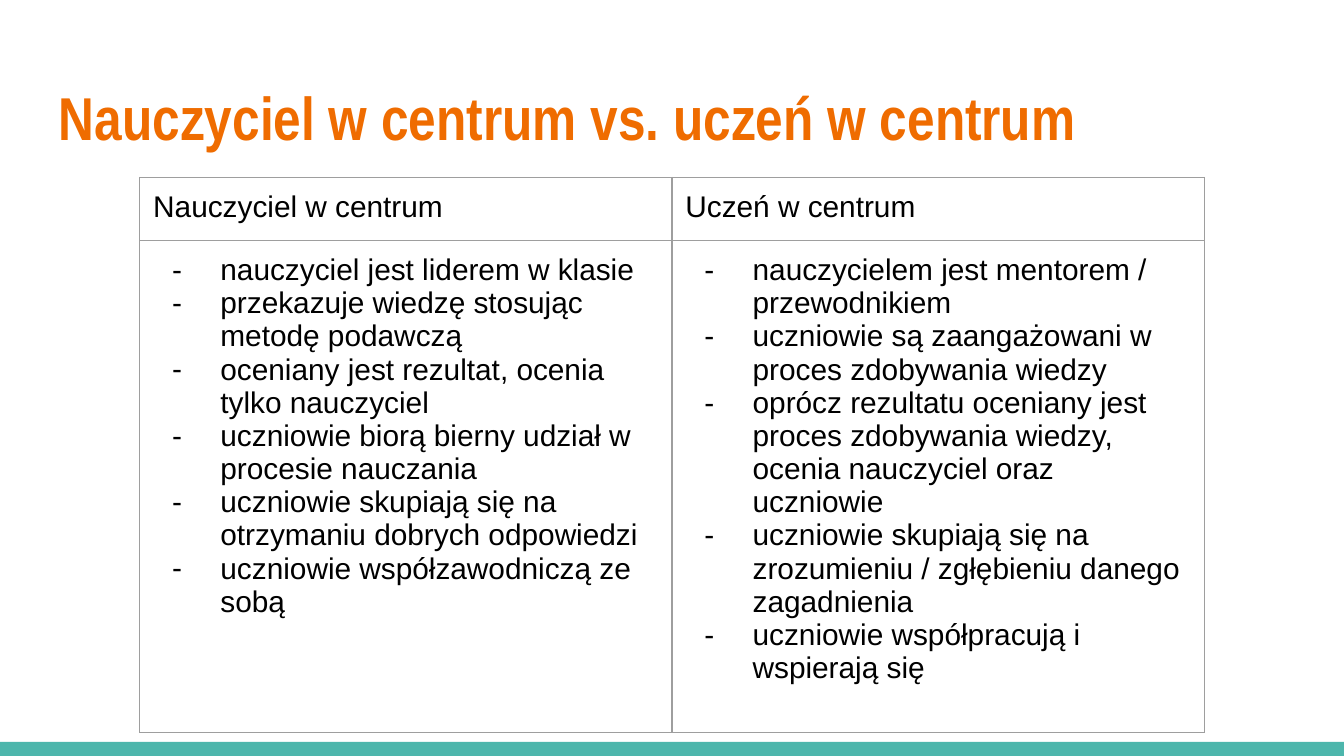
from dataclasses import dataclass

from lxml.etree import SubElement
from pptx import Presentation
from pptx.dml.color import RGBColor as Rgb
from pptx.enum.shapes import MSO_SHAPE as Preset
from pptx.enum.text import MSO_ANCHOR as Anchor
from pptx.oxml import parse_xml
from pptx.oxml.ns import nsdecls, qn
from pptx.util import Inches, Pt


@dataclass(frozen=True)
class Theme:
    title_color: str = "EF6C00"
    text_color: str = "000000"
    accent: str = "4DB6AC"
    border: str = "9E9E9E"
    border_width: float = 0.75
    title_font: str = "Arial Narrow"
    body_font: str = "Arial"
    title_size: float = 32.4
    body_size: float = 16
    inset: float = 0.1


@dataclass(frozen=True)
class Column:
    heading: str
    points: tuple[str, ...]


THEME = Theme()
TITLE = "Nauczyciel w centrum vs. uczeń w centrum"
COLUMNS = (
    Column("Nauczyciel w centrum", (
        "nauczyciel jest liderem w klasie",
        "przekazuje wiedzę stosując metodę podawczą",
        "oceniany jest rezultat, ocenia tylko nauczyciel",
        "uczniowie biorą bierny udział w procesie nauczania",
        "uczniowie skupiają się na otrzymaniu dobrych odpowiedzi",
        "uczniowie współzawodniczą ze sobą",
    )),
    Column("Uczeń w centrum", (
        "nauczycielem jest mentorem / przewodnikiem",
        "uczniowie są zaangażowani w proces zdobywania wiedzy",
        "oprócz rezultatu oceniany jest proces zdobywania wiedzy, "
        "ocenia nauczyciel oraz uczniowie",
        "uczniowie skupiają się na zrozumieniu / zgłębieniu danego zagadnienia",
        "uczniowie współpracują i wspierają się",
    )),
)
PAGE_WIDTH = 10
PAGE_HEIGHT = PAGE_WIDTH * 9 / 16
COLUMN_WIDTH = 3.96
ROW_HEIGHTS = (0.44, 3.01)


def write(para, text: str, *, size: float = THEME.body_size,
          font: str = THEME.body_font, color: str = THEME.text_color,
          bold: bool = False, bullet: str = "") -> None:
    span = para.add_run()
    span.text = text
    span.font.size = Pt(size)
    span.font.name = font
    span.font.bold = bold
    span.font.color.rgb = Rgb.from_string(color)
    points = str(round(size * 100))
    if bullet:
        props = para._p.get_or_add_pPr()
        props.set("marL", str(Inches(0.5)))
        props.set("indent", str(Inches(-0.36)))
        bullet_color = SubElement(props, qn("a:buClr"))
        SubElement(bullet_color, qn("a:srgbClr")).set("val", color)
        SubElement(props, qn("a:buSzPts")).set("val", points)
        SubElement(props, qn("a:buFont")).set("typeface", font)
        SubElement(props, qn("a:buChar")).set("char", bullet)
    # The paragraph end needs the same size, or rows grow to fit 18 pt.
    SubElement(para._p, qn("a:endParaRPr")).set("sz", points)


def set_insets(target) -> None:
    """Give a text frame or table cell the same margin on all sides."""
    for side in ("left", "top", "right", "bottom"):
        setattr(target, f"margin_{side}", Inches(THEME.inset))


def add_title(page) -> None:
    box = page.shapes.add_textbox(Inches(0.34), Inches(0.48), Inches(9.32), Inches(0.77))
    frame = box.text_frame
    frame.word_wrap = True
    frame.vertical_anchor = Anchor.MIDDLE
    set_insets(frame)
    write(frame.paragraphs[0], TITLE, size=THEME.title_size,
          font=THEME.title_font, color=THEME.title_color, bold=True)


def add_footer_bar(page) -> None:
    bar = page.shapes.add_shape(Preset.RECTANGLE, 0, Inches(5.52),
                                Inches(PAGE_WIDTH), Inches(0.11))
    bar.shadow.inherit = False
    bar.fill.solid()
    bar.fill.fore_color.rgb = Rgb.from_string(THEME.accent)
    bar.line.fill.background()


def style_cell(cell) -> None:
    set_insets(cell)
    cell.fill.background()
    props = cell._tc.get_or_add_tcPr()
    for index, side in enumerate("LRTB"):
        props.insert(index, parse_xml(
            f'<a:ln{side} {nsdecls("a")} w="{Pt(THEME.border_width)}">'
            f'<a:solidFill><a:srgbClr val="{THEME.border}"/></a:solidFill>'
            f'</a:ln{side}>'))


def add_comparison(page, columns: tuple[Column, ...]) -> None:
    table = page.shapes.add_table(
        len(ROW_HEIGHTS), len(columns), Inches(1.04), Inches(1.32),
        Inches(COLUMN_WIDTH * len(columns)), Inches(sum(ROW_HEIGHTS))).table
    table.first_row = table.horz_banding = False
    for row, height in zip(table.rows, ROW_HEIGHTS):
        row.height = Inches(height)
    for index, column in enumerate(columns):
        table.columns[index].width = Inches(COLUMN_WIDTH)
        heading, body = table.cell(0, index), table.cell(1, index)
        style_cell(heading)
        style_cell(body)
        write(heading.text_frame.paragraphs[0], column.heading)
        frame = body.text_frame
        for number, point in enumerate(column.points):
            para = frame.add_paragraph() if number else frame.paragraphs[0]
            write(para, point, bullet="-")


def main() -> None:
    deck = Presentation()
    deck.slide_width, deck.slide_height = Inches(PAGE_WIDTH), Inches(PAGE_HEIGHT)
    page = deck.slides.add_slide(deck.slide_layouts[6])
    add_footer_bar(page)
    add_title(page)
    add_comparison(page, COLUMNS)
    deck.save("out.pptx")


if __name__ == "__main__":
    main()
